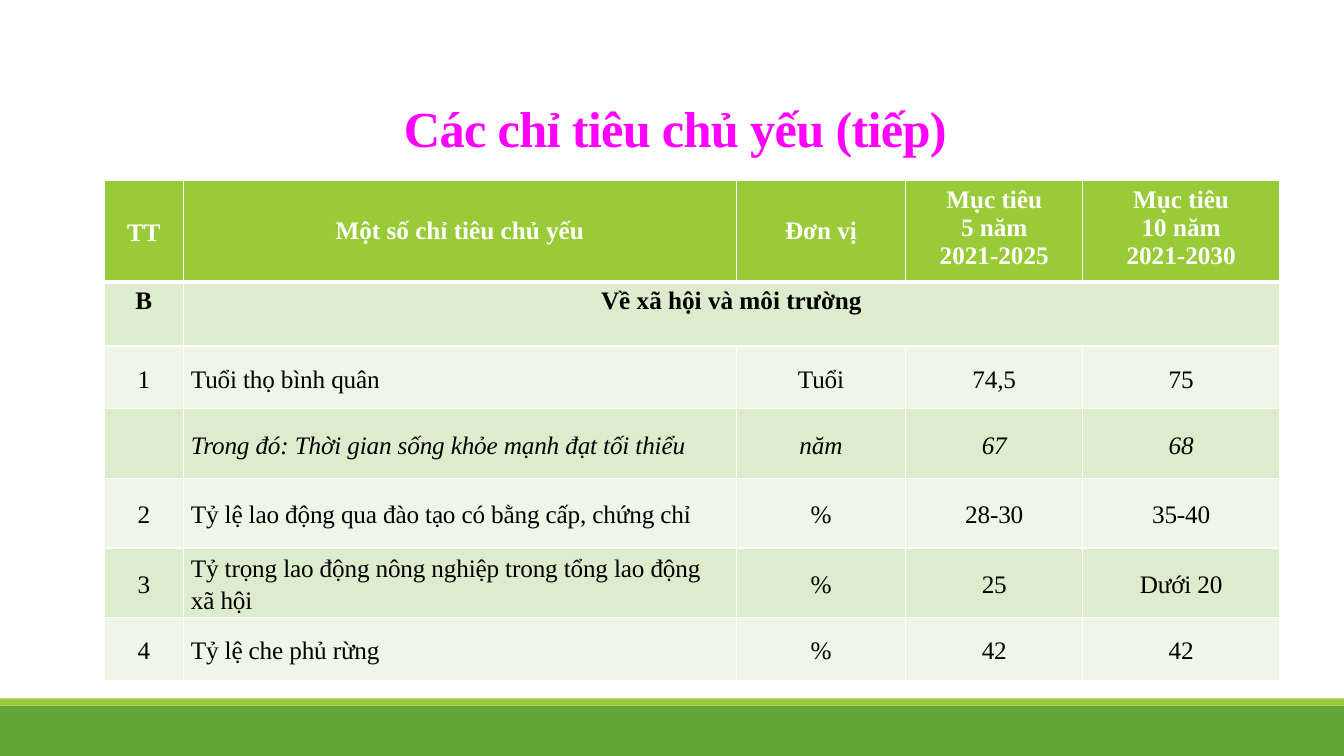
import pptx
import pptx.dml.color
import pptx.enum.shapes
import pptx.enum.text
import pptx.oxml
import pptx.oxml.ns
import pptx.util
from pptx.util import Pt

ALIGN = pptx.enum.text.PP_ALIGN
ANCHOR = pptx.enum.text.MSO_ANCHOR


def color(hex_text):
    return pptx.dml.color.RGBColor.from_string(hex_text)


class SlideStyle:
    """Holds the style and the current slide, and draws each kind of element."""

    font = "Times New Roman"
    green, lime = "63A537", "99CB38"
    bands = ("DEECCE", "EFF6E8")
    white, black, magenta = "FFFFFF", "000000", "FF00FF"

    def __init__(self, slide):
        self.slide = slide

    def band(self, top, height, fill):
        bar = self.slide.shapes.add_shape(
            pptx.enum.shapes.MSO_SHAPE.RECTANGLE, 0, Pt(top), Pt(960), Pt(height))
        bar.shadow.inherit = False
        bar.fill.solid()
        bar.fill.fore_color.rgb = color(fill)
        bar.line.fill.background()

    def add_text(self, paragraph, text, size, ink, bold=False, italic=False, spacing=0):
        run = paragraph.add_run()
        run.text = text
        run.font.name = self.font
        run.font.size = Pt(size)
        run.font.bold = bold
        run.font.italic = italic
        run.font.color.rgb = color(ink)
        run._r.get_or_add_rPr().set("spc", str(round(spacing * 100)))

    def title(self, text, left, top, width, height):
        frame = self.slide.shapes.add_textbox(
            Pt(left), Pt(top), Pt(width), Pt(height)).text_frame
        frame.word_wrap = True
        frame.vertical_anchor = ANCHOR.BOTTOM
        heading = frame.paragraphs[0]
        heading.alignment = ALIGN.CENTER
        heading.line_spacing = 0.85
        self.add_text(heading, text, 36, self.magenta, bold=True, spacing=-0.5)

    def table(self, left, top, widths, heights):
        table = self.slide.shapes.add_table(
            len(heights), len(widths), Pt(left), Pt(top),
            Pt(sum(widths)), Pt(sum(heights))).table
        for column, width in zip(table.columns, widths):
            column.width = Pt(width)
        for row, height in zip(table.rows, heights):
            row.height = Pt(height)
        return table

    def paint(self, cell, fill, top=1, bottom=1):
        properties = cell._tc.get_or_add_tcPr()
        for side, width in (("L", 1), ("R", 1), ("T", top), ("B", bottom)):
            properties.append(pptx.oxml.parse_xml(
                f'<a:ln{side} {pptx.oxml.ns.nsdecls("a")} w="{Pt(width)}"><a:solidFill>'
                f'<a:srgbClr val="{self.white}"/></a:solidFill></a:ln{side}>'))
        cell.fill.solid()
        cell.fill.fore_color.rgb = color(fill)

    def fill_text(self, cell, text, ink, bold=False, italic=False, left=False,
                  middle=True, roomy=True):
        cell.vertical_anchor = ANCHOR.MIDDLE if middle else ANCHOR.TOP
        if roomy:
            cell.margin_left = cell.margin_right = Pt(5.4)
            cell.margin_top = cell.margin_bottom = 0
        for number, line in enumerate(text.split("\n")):
            frame = cell.text_frame
            paragraph = frame.add_paragraph() if number else frame.paragraphs[0]
            paragraph.alignment = ALIGN.LEFT if left else ALIGN.CENTER
            if roomy:
                paragraph.line_spacing = 1.15
                paragraph.space_before = paragraph.space_after = Pt(12)
            if line:
                self.add_text(paragraph, line, 18, ink, bold, italic,
                              -0.1 if roomy else 0)


HEADINGS = ("TT", "Một số chỉ tiêu chủ yếu", "Đơn vị",
            "Mục tiêu\n5 năm\n2021-2025", "Mục tiêu\n10 năm\n2021-2030")
SECTION = ("B", "Về xã hội và môi trường")
INDICATORS = (
    ("1", "Tuổi thọ bình quân", "Tuổi", "74,5", "75"),
    ("", "Trong đó: Thời gian sống khỏe mạnh đạt tối thiểu", "năm", "67", "68"),
    ("2", "Tỷ lệ lao động qua đào tạo có bằng cấp, chứng chỉ", "%", "28-30", "35-40"),
    ("3", "Tỷ trọng lao động nông nghiệp trong tổng lao động xã hội", "%", "25", "Dưới 20"),
    ("4", "Tỷ lệ che phủ rừng", "%", "42", "42"),
)


def main():
    deck = pptx.Presentation()
    deck.slide_width, deck.slide_height = Pt(960), Pt(540)
    style = SlideStyle(deck.slides.add_slide(deck.slide_layouts[6]))

    style.band(504, 36, style.green)
    style.band(498.8, 5.2, style.lime)
    style.title("Các chỉ tiêu chủ yếu (tiếp)", 86.4, 2, 792, 114.5)

    targets = style.table(74.5, 129.2, (56.5, 395, 121, 126.5, 140.5),
                          (72, 46, 44.8, 49.7, 49.7, 49.7, 44.8))
    for column, heading in enumerate(HEADINGS):
        cell = targets.cell(0, column)
        style.paint(cell, style.lime, bottom=3)
        style.fill_text(cell, heading, style.white, bold=True,
                        middle=column < 3, roomy=column == 0)

    for column in range(len(HEADINGS)):
        style.paint(targets.cell(1, column), style.bands[0], top=3)
    targets.cell(1, 1).merge(targets.cell(1, 4))
    for column, text in enumerate(SECTION):
        style.fill_text(targets.cell(1, column), text, style.black, bold=True,
                        middle=False, roomy=False)

    for row, indicator in enumerate(INDICATORS, start=2):
        for column, text in enumerate(indicator):
            cell = targets.cell(row, column)
            style.paint(cell, style.bands[(row - 1) % 2])
            style.fill_text(cell, text, style.black, italic=not indicator[0],
                            left=column == 1)

    deck.save("out.pptx")


if __name__ == "__main__":
    main()
